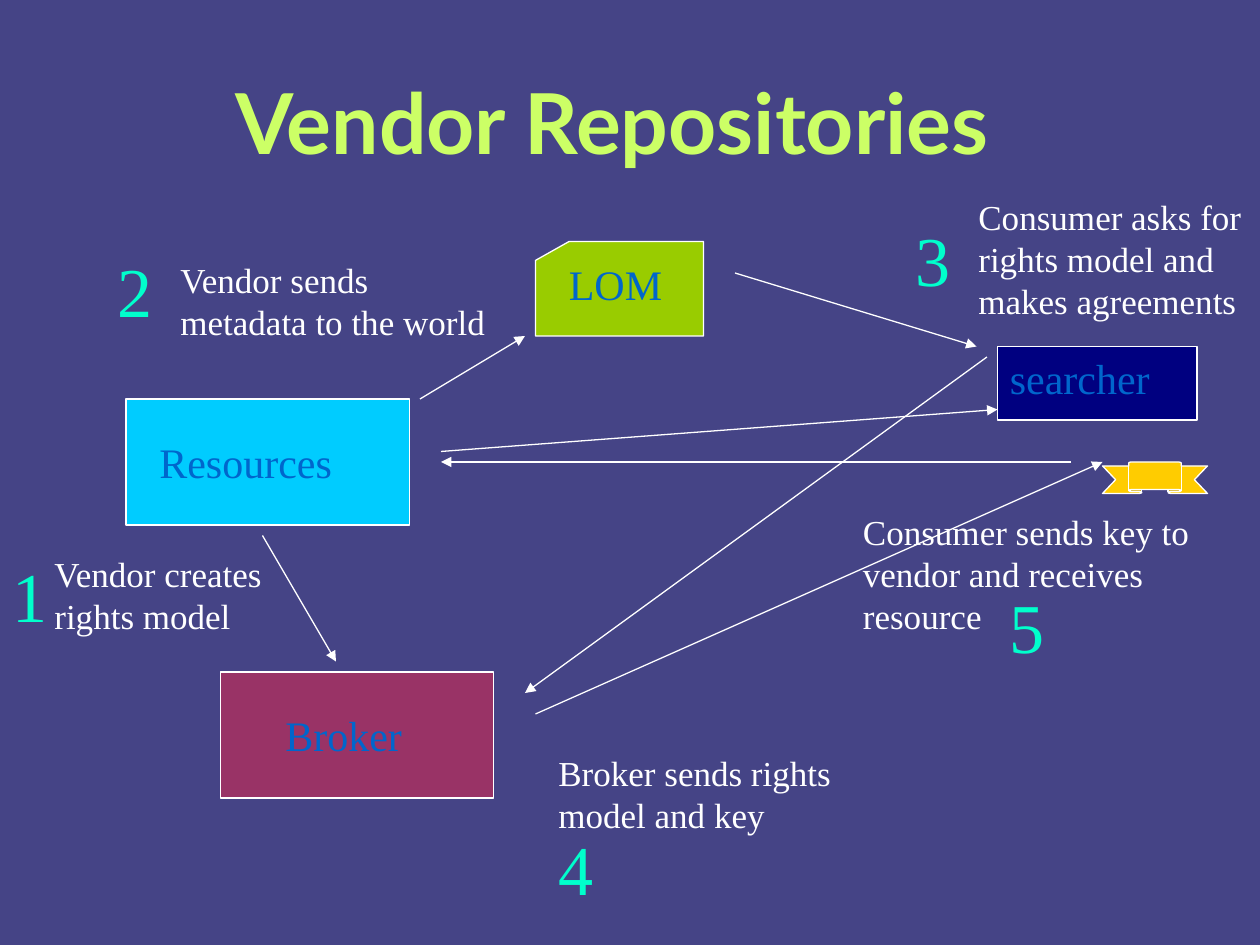
from typing import NamedTuple

from lxml import etree
from pptx import Presentation
from pptx import util as u
from pptx.dml.color import RGBColor
from pptx.enum import shapes, text
from pptx.oxml.ns import qn

COLUMNS, ROWS = 120, 90
SLIDE_WIDTH, SLIDE_HEIGHT = u.Inches(10), u.Inches(7.5)

BACKGROUND = RGBColor(0x45, 0x44, 0x86)
WHITE = RGBColor(0xFF, 0xFF, 0xFF)
LIME = RGBColor(0xCC, 0xFF, 0x66)
CYAN = RGBColor(0x00, 0xCC, 0xFF)
GREEN = RGBColor(0x99, 0xCC, 0x00)
PLUM = RGBColor(0x99, 0x33, 0x66)
NAVY = RGBColor(0x00, 0x00, 0x80)
GOLD = RGBColor(0xFF, 0xCC, 0x00)
BLUE = RGBColor(0x00, 0x66, 0xCC)
AQUA = RGBColor(0x00, 0xFF, 0xCC)

Preset = shapes.MSO_SHAPE


class Area(NamedTuple):
    column: float
    row: float
    columns: float
    rows: float


class Style(NamedTuple):
    font: str
    size: int
    color: RGBColor
    bold: bool = False


class Node(NamedTuple):
    preset: Preset
    area: Area
    fill: RGBColor


class Label(NamedTuple):
    words: str
    area: Area
    style: Style


class Arrow(NamedTuple):
    start: tuple[float, float]
    end: tuple[float, float]


TITLE = Style("Lato", 48, LIME, True)
NAME = Style("Times New Roman", 24, BLUE)
NOTE = Style("Times New Roman", 20, WHITE)
NUMBER = Style("Times New Roman", 40, AQUA)

NODES = [
    Node(Preset.RECTANGLE, Area(12, 38, 27, 12), CYAN),
    Node(Preset.FLOWCHART_CARD, Area(51, 23, 16, 9), GREEN),
    Node(Preset.RECTANGLE, Area(21, 64, 26, 12), PLUM),
    Node(Preset.RECTANGLE, Area(95, 33, 19, 7), NAVY),
]
KEY = Node(Preset.UP_RIBBON, Area(105, 44, 10, 3), GOLD)

ARROWS = [
    Arrow((40, 38), (50, 32)),
    Arrow((25, 51), (32, 63)),
    Arrow((94, 34), (50, 66)),
    Arrow((51, 68), (105, 44)),
    Arrow((102, 44), (42, 44)),
    Arrow((42, 43), (95, 39)),
    Arrow((70, 26), (93, 33)),
]

LABELS = [
    Label("Resources", Area(14, 41, 23, 6), NAME),
    Label("Broker", Area(26, 67, 17, 6), NAME),
    Label("searcher", Area(95, 33, 18, 6), NAME),
    Label("LOM", Area(53, 24, 13, 6), NAME),
    Label("Vendor sends metadata to the world", Area(16, 24, 32, 9.25), NOTE),
    Label("Vendor creates rights model", Area(4, 52, 23, 9.25), NOTE),
    Label("Consumer asks for rights model and makes agreements",
          Area(92, 18, 28, 13.25), NOTE),
    Label("Broker sends rights model and key", Area(52, 71, 35, 9.25), NOTE),
    Label("Consumer sends key to vendor and receives resource",
          Area(81, 48, 34, 13.25), NOTE),
    Label("1", Area(0, 52, 5, 9.25), NUMBER),
    Label("2", Area(10, 23, 6, 9.25), NUMBER),
    Label("3", Area(86, 20, 6, 9.25), NUMBER),
    Label("4", Area(52, 78, 7, 9.25), NUMBER),
    Label("5", Area(95, 55, 8, 9.25), NUMBER),
]


def across(columns: float) -> int:
    return round(SLIDE_WIDTH * columns / COLUMNS)


def down(rows: float) -> int:
    return round(SLIDE_HEIGHT * rows / ROWS)


def place(area: Area) -> tuple[int, int, int, int]:
    return (across(area.column), down(area.row),
            across(area.columns), down(area.rows))


def outline(line) -> None:
    line.color.rgb = WHITE
    line.width = u.Pt(0.75)


def draw_node(slide, node: Node):
    shape = slide.shapes.add_shape(node.preset, *place(node.area))
    shape.shadow.inherit = False
    shape.fill.solid()
    shape.fill.fore_color.rgb = node.fill
    outline(shape.line)
    return shape


def draw_arrow(slide, arrow: Arrow) -> None:
    (x1, y1), (x2, y2) = arrow.start, arrow.end
    connector = slide.shapes.add_connector(
        shapes.MSO_CONNECTOR.STRAIGHT, across(x1), down(y1), across(x2), down(y2))
    outline(connector.line)
    properties = connector.element.spPr
    head = etree.SubElement(properties.find(qn("a:ln")), qn("a:tailEnd"))
    head.set("type", "triangle")
    etree.SubElement(properties, qn("a:effectLst"))


def draw_label(slide, label: Label):
    frame = slide.shapes.add_textbox(*place(label.area)).text_frame
    frame.word_wrap = True
    frame.auto_size = text.MSO_AUTO_SIZE.SHAPE_TO_FIT_TEXT
    run = frame.paragraphs[0].add_run()
    run.text = label.words
    run.font.name = label.style.font
    run.font.size = u.Pt(label.style.size)
    run.font.bold = label.style.bold
    run.font.color.rgb = label.style.color
    return frame


def draw_title(slide) -> None:
    frame = draw_label(
        slide, Label("Vendor Repositories", Area(7.3, 4, 102, 15), TITLE))
    frame.auto_size = text.MSO_AUTO_SIZE.NONE
    frame.vertical_anchor = text.MSO_ANCHOR.MIDDLE
    frame.paragraphs[0].alignment = text.PP_ALIGN.CENTER


def main() -> None:
    deck = Presentation()
    deck.slide_width, deck.slide_height = SLIDE_WIDTH, SLIDE_HEIGHT
    slide = deck.slides.add_slide(deck.slide_layouts[6])
    slide.background.fill.solid()
    slide.background.fill.fore_color.rgb = BACKGROUND

    draw_title(slide)
    for node in NODES:
        draw_node(slide, node)
    for arrow in ARROWS:
        draw_arrow(slide, arrow)
    ribbon = draw_node(slide, KEY)
    ribbon.adjustments[0], ribbon.adjustments[1] = 0.125, 0.5
    for label in LABELS:
        draw_label(slide, label)
    deck.save("out.pptx")


if __name__ == "__main__":
    main()
